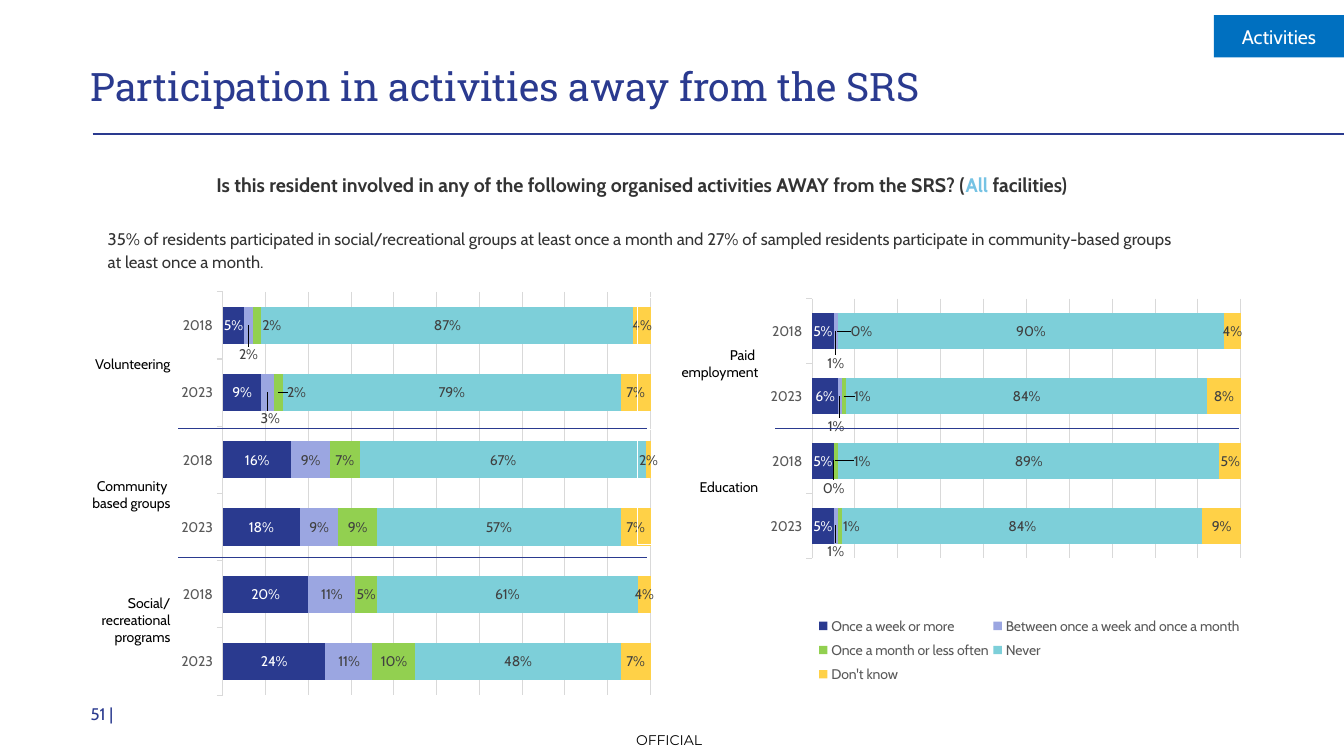
from lxml import etree
from pptx import Presentation
from pptx.chart.data import CategoryChartData
from pptx.dml.color import RGBColor
from pptx.enum.chart import XL_CHART_TYPE, XL_LABEL_POSITION, XL_LEGEND_POSITION, XL_TICK_MARK
from pptx.enum.shapes import MSO_CONNECTOR, MSO_SHAPE
from pptx.enum.text import MSO_ANCHOR, PP_ALIGN
from pptx.oxml import parse_xml
from pptx.oxml.ns import nsdecls, qn
from pptx.util import Inches, Pt

BAR_STACKED = XL_CHART_TYPE.BAR_STACKED
LABEL_CENTER = XL_LABEL_POSITION.CENTER
LEGEND_RIGHT = XL_LEGEND_POSITION.RIGHT
TICK_OUTSIDE, TICK_NONE = XL_TICK_MARK.OUTSIDE, XL_TICK_MARK.NONE
STRAIGHT = MSO_CONNECTOR.STRAIGHT
RECTANGLE = MSO_SHAPE.RECTANGLE
MIDDLE, BOTTOM, TOP = MSO_ANCHOR.MIDDLE, MSO_ANCHOR.BOTTOM, MSO_ANCHOR.TOP
LEFT, CENTER, RIGHT = PP_ALIGN.LEFT, PP_ALIGN.CENTER, PP_ALIGN.RIGHT

NAVY = RGBColor(0x2A, 0x3A, 0x8F)
LILAC = RGBColor(0x9B, 0xA6, 0xE1)
GREEN = RGBColor(0x92, 0xD0, 0x50)
TEAL = RGBColor(0x7D, 0xCF, 0xD9)
YELLOW = RGBColor(0xFF, 0xD1, 0x47)
SKY = RGBColor(0x76, 0xC3, 0xE4)
TAG_BLUE = RGBColor(0x00, 0x70, 0xC0)
TEXT = RGBColor(0x33, 0x33, 0x33)
LABEL_GREY = RGBColor(0x40, 0x40, 0x40)
AXIS_GREY = RGBColor(0x59, 0x59, 0x59)
GRID_GREY = RGBColor(0xD9, 0xD9, 0xD9)
BLACK = RGBColor(0, 0, 0)
WHITE = RGBColor(0xFF, 0xFF, 0xFF)

TITLE = "Participation in activities away from the SRS"
QUESTION = [
    ("Is this resident involved in any of the following organised activities AWAY from the SRS? (", TEXT),
    ("All", SKY),
    (" facilities)", TEXT),
]
FINDING = [(
    "35% of residents participated in social/recreational groups at least once a month and 27% of "
    "sampled residents participate in community-based groups at least once a month.", TEXT)]

YEARS = ["2018", "2023"]
FREQUENCIES = ["Once a week or more", "Between once a week and once a month",
               "Once a month or less often", "Never", "Don't know"]
SERIES_COLORS = [NAVY, LILAC, GREEN, TEAL, YELLOW]

CHARTS = [
    {
        "box": (1.7, 2.82, 4.85, 4.16),
        "plot": (0.105, 0.018, 0.875, 0.962),
        "legend": None,
        "values": [
            (0.05, 0.09, 0.16, 0.18, 0.2, 0.24),
            (0.02, 0.03, 0.09, 0.09, 0.11, 0.11),
            (0.02, 0.02, 0.07, 0.09, 0.05, 0.1),
            (0.87, 0.79, 0.67, 0.57, 0.61, 0.48),
            (0.04, 0.07, 0.02, 0.07, 0.04, 0.07),
        ],
        "label_shifts": {1: [(0, 0.07), (0.005, 0.062)], 2: [(0.03, 0), (0.037, 0)]},
    },
    {
        "box": (7.54, 2.81, 4.85, 4.16),
        "plot": (0.106, 0.037, 0.877, 0.619),
        "legend": (0.11, 0.78, 0.88, 0.19),
        "values": [
            (0.05, 0.06, 0.05, 0.05),
            (0.01, 0.01, 0, 0.01),
            (0, 0.01, 0.01, 0.01),
            (0.9, 0.84, 0.89, 0.84),
            (0.04, 0.08, 0.05, 0.09),
        ],
        "label_shifts": {
            1: [(0, 0.076), (-0.008, 0.072), (0, 0.064), (0, 0.06)],
            2: [(0.048, 0), (0.037, 0), (0.054, 0), (0.023, 0)],
        },
    },
]
ACTIVITY_TABLES = [
    (0.49, 2.96, [("Volunteering", 1.31), ("Community \vbased groups", 1.28),
                  ("Social/\vrecreational programs", 1.2)]),
    (6.32, 2.95, [("Paid \nemployment", 1.31), ("Education", 1.14)]),
]
TABLE_WIDTH = 1.21
RULES = [
    (0.92, 13.33, 1.33, 1.5),
    (1.77, 6.42, 4.25, 0.5),
    (1.77, 6.42, 5.53, 0.5),
    (7.69, 12.29, 4.25, 0.5),
]


def style_font(font, size, color, name="Cabin", bold=False):
    font.size, font.name, font.bold = Pt(size), name, bold
    font.color.rgb = color


def add_text(slide, box, runs, size, align=LEFT, anchor=TOP, name="Cabin", bold=False):
    frame = slide.shapes.add_textbox(*map(Inches, box)).text_frame
    frame.word_wrap = True
    frame.vertical_anchor = anchor
    paragraph = frame.paragraphs[0]
    paragraph.alignment = align
    style_font(paragraph.font, size, runs[0][1], name, bold)
    for text, color in runs:
        run = paragraph.add_run()
        run.text = text
        run.font.color.rgb = color
    return frame


def manual_layout(values, modes=()):
    layout = parse_xml(f"<c:layout {nsdecls('c')}><c:manualLayout/></c:layout>")
    entries = [*modes, *zip("xywh", values)]
    for tag, value in entries:
        etree.SubElement(layout[0], qn(f"c:{tag}")).set("val", str(value))
    return layout


def place_in_chart(element, values, inner=False):
    for old in element.findall(qn("c:layout")):
        element.remove(old)
    modes = [("layoutTarget", "inner")] if inner else []
    modes += [("xMode", "edge"), ("yMode", "edge")]
    layout = manual_layout(values, modes)
    if inner:
        element.insert(0, layout)
    else:
        element.find(qn("c:legendPos")).addnext(layout)


def add_activity_chart(slide, content):
    data = CategoryChartData(number_format="0%")
    data.categories = YEARS * (len(content["values"][0]) // len(YEARS))
    for name, values in zip(FREQUENCIES, content["values"]):
        data.add_series(name, values)
    chart = slide.shapes.add_chart(BAR_STACKED, *map(Inches, content["box"]), data).chart
    style_font(chart.font, 10, BLACK)
    chart.has_title = False
    chart.has_legend = content["legend"] is not None
    if chart.has_legend:
        chart.legend.position = LEGEND_RIGHT
        chart.legend.include_in_layout = False
        style_font(chart.legend.font, 10, AXIS_GREY)
        place_in_chart(chart.legend._element, content["legend"])
    place_in_chart(chart._chartSpace.chart.plotArea, content["plot"], inner=True)

    years, shares = chart.category_axis, chart.value_axis
    years.reverse_order = True
    years.major_tick_mark = TICK_OUTSIDE
    years.minor_tick_mark = TICK_NONE
    years.format.line.color.rgb = GRID_GREY
    years.format.line.width = Pt(0.75)
    style_font(years.tick_labels.font, 10, AXIS_GREY)
    shares.visible = False
    shares.minimum_scale, shares.maximum_scale, shares.major_unit = 0, 1, 0.1
    shares.has_major_gridlines = True
    shares.major_gridlines.format.line.color.rgb = GRID_GREY
    shares.major_gridlines.format.line.width = Pt(0.75)

    plot = chart.plots[0]
    plot.gap_width, plot.overlap, plot.vary_by_categories = 80, 100, False
    for index, (series, color) in enumerate(zip(plot.series, SERIES_COLORS)):
        series.format.fill.solid()
        series.format.fill.fore_color.rgb = color
        label_color = WHITE if color == NAVY else LABEL_GREY
        labels = series.data_labels
        labels.show_value = True
        labels.position = LABEL_CENTER
        style_font(labels.font, 10, label_color)
        for point, shift in enumerate(content["label_shifts"].get(index, [])):
            label = series.points[point].data_label
            label.position = LABEL_CENTER
            style_font(label.font, 10, label_color)
            moved = labels._element.findall(qn("c:dLbl"))[point]
            moved.find(qn("c:idx")).addnext(manual_layout(shift))


def add_activity_table(slide, left, top, rows):
    height = sum(row_height for _, row_height in rows)
    box = map(Inches, (left, top, TABLE_WIDTH, height))
    table = slide.shapes.add_table(len(rows), 1, *box).table
    table.first_row = table.horz_banding = False
    for index, (text, row_height) in enumerate(rows):
        table.rows[index].height = Inches(row_height)
        cell = table.cell(index, 0)
        cell.fill.background()
        cell.vertical_anchor = MIDDLE
        cell.margin_left = cell.margin_right = cell.margin_top = Inches(0.01)
        cell.margin_bottom = 0
        cell.text_frame.text = text
        for paragraph in cell.text_frame.paragraphs:
            paragraph.alignment = RIGHT
            style_font(paragraph.font, 10, BLACK)


def add_rule(slide, start, end, top, width):
    ends = map(Inches, (start, top, end, top))
    rule = slide.shapes.add_connector(STRAIGHT, *ends)
    rule.line.color.rgb = NAVY
    rule.line.width = Pt(width)
    etree.SubElement(rule._element.spPr, qn("a:effectLst"))


def main():
    presentation = Presentation()
    presentation.slide_width, presentation.slide_height = Inches(13.33), Inches(7.5)
    slide = presentation.slides.add_slide(presentation.slide_layouts[5])

    title = slide.shapes.title
    title.left, title.top, title.width, title.height = map(Inches, (0.8, 0.41, 12.13, 0.73))
    title.text_frame.text = TITLE
    title.text_frame.vertical_anchor = BOTTOM
    title.text_frame.paragraphs[0].alignment = LEFT
    style_font(title.text_frame.paragraphs[0].font, 28, NAVY, "Roboto Slab")

    footer = add_text(slide, (6.31, 7.26, 0.76, 0.17), [("OFFICIAL", BLACK)], 10, name="Montserrat")
    footer.margin_left = footer.margin_right = footer.margin_top = footer.margin_bottom = 0
    footer.word_wrap = False
    add_text(slide, (0.8, 6.88, 0.59, 0.4), [("51 |", NAVY)], 12, anchor=MIDDLE)
    question = add_text(slide, (0.97, 1.63, 10.79, 0.53), QUESTION, 14, CENTER, bold=True)
    finding = add_text(slide, (0.97, 2.19, 10.79, 0.58), FINDING, 12)
    for frame in (question, finding):
        frame.paragraphs[0].line_spacing = 1.14
        frame.paragraphs[0].space_before = Pt(10)

    tag = slide.shapes.add_shape(RECTANGLE, *map(Inches, (12.04, 0.15, 1.29, 0.42)))
    tag.shadow.inherit = False
    tag.fill.solid()
    tag.fill.fore_color.rgb = TAG_BLUE
    tag.line.fill.background()
    tag.text_frame.text = "Activities"
    tag.text_frame.vertical_anchor = MIDDLE
    tag.text_frame.paragraphs[0].alignment = CENTER
    style_font(tag.text_frame.paragraphs[0].font, 14, WHITE)

    for content in CHARTS:
        add_activity_chart(slide, content)
    for left, top, rows in ACTIVITY_TABLES:
        add_activity_table(slide, left, top, rows)
    for rule in RULES:
        add_rule(slide, *rule)
    presentation.save("out.pptx")


if __name__ == "__main__":
    main()
